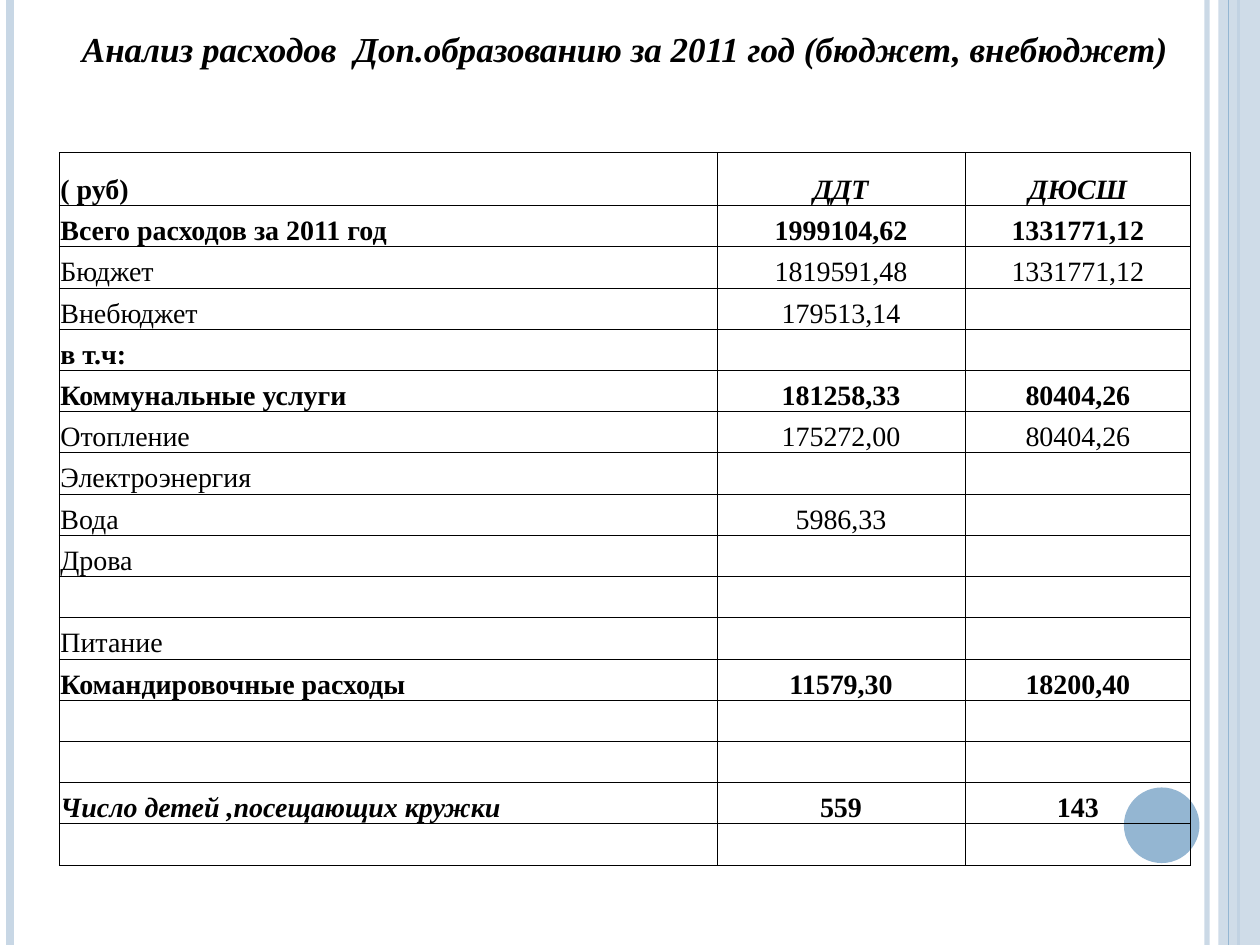
from dataclasses import dataclass

from lxml.etree import SubElement
from pptx import Presentation
from pptx.dml.color import RGBColor as Rgb
from pptx.enum.shapes import MSO_CONNECTOR as Conn, MSO_SHAPE as Shape
from pptx.enum.text import MSO_ANCHOR as Anchor, PP_ALIGN as Align
from pptx.oxml.ns import qn
from pptx.util import Inches, Pt


@dataclass(frozen=True)
class Theme:
    font: str = "Times New Roman"
    ink: str = "000000"
    pale: str = "C8D7E5"
    blue: str = "94B6D2"
    title: int = 20
    body: int = 16
    rule: float = 0.5


THEME = Theme()
TITLE = "Анализ расходов  Доп.образованию за 2011 год (бюджет, внебюджет)"
COLS = (5.22, 1.97, 1.79)
GAP = 3  # rows above the ruled grid, the title among them

# Label, two values, style of the label, style of the values (b bold, i italic)
ROWS = [
    ("( руб)", "ДДТ", "ДЮСШ", "b", "bi"),
    ("Всего расходов за 2011 год", "1999104,62", "1331771,12", "b", "b"),
    ("Бюджет", "1819591,48", "1331771,12", "", ""),
    ("Внебюджет", "179513,14", "", "", ""),
    ("в т.ч:", "", "", "b", ""),
    ("Коммунальные услуги", "181258,33", "80404,26", "b", "b"),
    ("Отопление", "175272,00", "80404,26", "", ""),
    ("Электроэнергия", "", "", "", ""),
    ("Вода", "5986,33", "", "", ""),
    ("Дрова", "", "", "", ""),
    ("", "", "", "", ""),
    ("Питание", "", "", "", ""),
    ("Командировочные расходы", "11579,30", "18200,40", "b", "b"),
    ("", "", "", "", ""),
    ("", "", "", "", ""),
    ("Число детей ,посещающих кружки", "559", "143", "bi", "b"),
    ("", "", "", "", ""),
]


def fade(node, alpha):
    """Set the opacity, in percent, of the solid colour inside node."""
    color = next(node.iter(qn("a:srgbClr")))
    SubElement(color, qn("a:alpha"), val=str(alpha * 1000))


def add_bar(slide, x, width, color, alpha=100):
    line = slide.shapes.add_connector(
        Conn.STRAIGHT, Inches(x), 0, Inches(x), Inches(7.5))
    line.line.color.rgb = Rgb.from_string(color)
    line.line.width = Pt(width)
    props = line._element.spPr
    SubElement(props, qn("a:effectLst"))
    if alpha < 100:
        fade(props, alpha)


def add_block(slide, kind, box, color, alpha=100):
    block = slide.shapes.add_shape(kind, *map(Inches, box))
    block.shadow.inherit = False
    block.fill.solid()
    block.fill.fore_color.rgb = Rgb.from_string(color)
    block.line.fill.background()
    if alpha < 100:
        fade(block._element.spPr, alpha)


def write(cell, text, size=THEME.body, style="", align=Align.LEFT,
          anchor=Anchor.BOTTOM):
    cell.vertical_anchor = anchor
    para = cell.text_frame.paragraphs[0]
    para.alignment = align
    if text:
        run = para.add_run()
        run.text = text
        font = run.font
        font.name, font.size = THEME.font, Pt(size)
        font.bold, font.italic = "b" in style, "i" in style
        font.color.rgb = Rgb.from_string(THEME.ink)


def dress(cell, sides):
    """Clear the cell's fill, trim its insets and rule the given sides."""
    cell.margin_left = cell.margin_right = cell.margin_top = Inches(0.01)
    cell.margin_bottom = 0
    props = cell._tc.get_or_add_tcPr()
    for side in "LRTB":
        edge = SubElement(props, qn(f"a:ln{side}"), w=str(Pt(THEME.rule)))
        if side in sides:
            fill = SubElement(edge, qn("a:solidFill"))
            SubElement(fill, qn("a:srgbClr"), val=THEME.ink)
        else:
            SubElement(edge, qn("a:noFill"))
    cell.fill.background()


def add_grid(slide):
    count = GAP + len(ROWS)
    height, head = 6.64, 0.42
    table = slide.shapes.add_table(
        count, len(COLS), Inches(0.47), Inches(0.23),
        Inches(sum(COLS)), Inches(height)).table
    table.first_row = table.horz_banding = False
    for col, width in zip(table.columns, COLS):
        col.width = Inches(width)
    for i, row in enumerate(table.rows):
        row.height = Inches(head if i == GAP else (height - head) / (count - 1))
        sides = "LRTB" if i >= GAP else "B" if i == GAP - 1 else ""
        for cell in row.cells:
            dress(cell, sides)

    # Title row
    table.cell(0, 0).merge(table.cell(0, len(COLS) - 1))
    write(table.cell(0, 0), TITLE, size=THEME.title, style="bi",
          align=Align.CENTER, anchor=Anchor.MIDDLE)

    # Expense rows
    for i, (label, *values, left, right) in enumerate(ROWS, GAP):
        write(table.cell(i, 0), label, style=left)
        for j, value in enumerate(values, 1):
            write(table.cell(i, j), value, style=right, align=Align.CENTER)


def main():
    deck = Presentation()
    deck.slide_width, deck.slide_height = Inches(10), Inches(7.5)
    slide = deck.slides.add_slide(deck.slide_layouts[6])

    # Side stripes and disc
    add_bar(slide, 9.58, 3, THEME.pale, alpha=93)
    add_bar(slide, 0.08, 4.5, THEME.pale)
    add_bar(slide, 9.83, 1.5, THEME.blue)
    add_block(slide, Shape.RECTANGLE, (9.67, 0, 0.33, 7.5), THEME.pale, alpha=87)
    add_bar(slide, 9.75, 0.75, THEME.blue)
    add_block(slide, Shape.OVAL, (8.92, 6.25, 0.6, 0.6), THEME.blue)

    # Title and figures
    add_grid(slide)
    deck.save("out.pptx")


if __name__ == "__main__":
    main()
